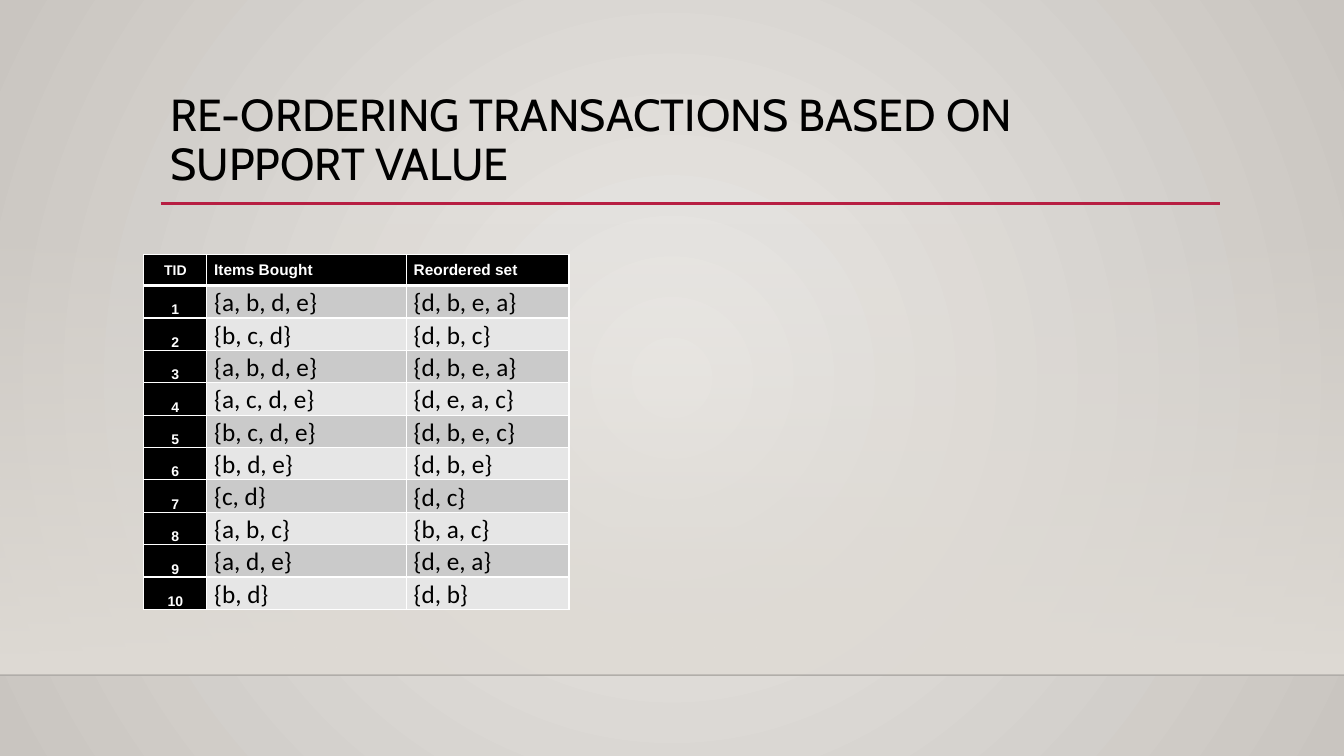
"""Build the slide on re-ordering transactions by support value."""
from dataclasses import dataclass

from lxml import etree
from pptx import Presentation
from pptx import util as u
from pptx.dml.color import RGBColor
from pptx.enum import shapes, text
from pptx.oxml import parse_xml
from pptx.oxml.ns import nsdecls, qn

PX = 9525
WIDTH, HEIGHT = 1280, 720
COLUMNS = (60, 190, 155)
ROW_HEIGHT = 30
BLACK, WHITE = "000000", "FFFFFF"
BANDS = ("CACACA", "E6E6E6")
HEADINGS = ("TID", "Items Bought", "Reordered set")
TRANSACTIONS = (
    ("{a, b, d, e}", "{d, b, e, a}"),
    ("{b, c, d}", "{d, b, c}"),
    ("{a, b, d, e}", "{d, b, e, a}"),
    ("{a, c, d, e}", "{d, e, a, c}"),
    ("{b, c, d, e}", "{d, b, e, c}"),
    ("{b, d, e}", "{d, b, e}"),
    ("{c, d}", "{d, c}"),
    ("{a, b, c}", "{b, a, c}"),
    ("{a, d, e}", "{d, e, a}"),
    ("{b, d}", "{d, b}"),
)


@dataclass(frozen=True)
class Rule:
    """A horizontal line across the slide."""
    left: int
    right: int
    y: int
    color: str
    weight: float
    opacity: int = 100


@dataclass(frozen=True)
class CellStyle:
    """The look of one kind of table cell."""
    fill: str
    font: str
    size: int
    color: str
    bold: bool
    anchor: text.MSO_ANCHOR
    align: text.PP_ALIGN = text.PP_ALIGN.LEFT
    bottom: int = 1


RULES = (
    Rule(0, WIDTH, 643, "000001", 1, 20),
    Rule(153, 1162, 194, "B71E42", 2.5),
)


def px(n: int) -> u.Emu:
    """Turn px into EMU."""
    return u.Emu(n * PX)


def rgb(value: str) -> RGBColor:
    """Turn a hex string into a colour."""
    return RGBColor.from_string(value)


def set_all(obj, values: dict) -> None:
    """Set attributes from a dict of format values."""
    for name, value in values.items():
        setattr(obj, name, value)


def write(tf, wording: str, spacing: float, align, font: str, size: int,
          color: str, bold: bool = False) -> None:
    """Write one formatted paragraph into a text frame."""
    p = tf.paragraphs[0]
    set_all(p, {"line_spacing": spacing, "alignment": align})
    r = p.add_run()
    r.text = wording
    set_all(r.font, {"name": font, "size": u.Pt(size), "bold": bold})
    r.font.color.rgb = rgb(color)


def set_gradient(fill, root, stops: tuple, shade: str) -> None:
    """Give a fill a gradient of (position, colour, opacity) stops."""
    fill.solid()
    gs = "".join(
        f'<a:gs pos="{pos * 1000}"><a:srgbClr val="{color}">'
        f'<a:alpha val="{opacity * 1000}"/></a:srgbClr></a:gs>'
        for pos, color, opacity in stops)
    solid = root.find(".//" + qn("a:solidFill"))
    solid.getparent().replace(solid, parse_xml(
        f'<a:gradFill {nsdecls("a")} rotWithShape="1">'
        f'<a:gsLst>{gs}</a:gsLst>{shade}</a:gradFill>'))


def add_backdrop(s) -> None:
    """Draw the radial background and the fading wall panel."""
    set_gradient(
        s.background.fill, s.element,
        ((0, "EBE9E6", 100), (100, "C9C5C0", 100)),
        '<a:path path="circle"><a:fillToRect l="50000" t="50000" '
        'r="50000" b="50000"/></a:path>')
    sp = s.shapes.add_shape(shapes.MSO_SHAPE.RECTANGLE,
                            px(0), px(212), px(WIDTH), px(431))
    sp.shadow.inherit = False
    sp.line.fill.background()
    set_gradient(sp.fill, sp.element.spPr,
                 ((0, "DFDBD5", 0), (100, "DFDBD5", 100)),
                 '<a:lin ang="5400000" scaled="0"/>')


def add_rule(s, rule: Rule) -> None:
    """Draw one horizontal line."""
    sp = s.shapes.add_connector(shapes.MSO_CONNECTOR.STRAIGHT, px(rule.left),
                                px(rule.y), px(rule.right), px(rule.y))
    sp.line.width = u.Pt(rule.weight)
    sp.line.color.rgb = rgb(rule.color)
    spPr = sp.element.spPr
    if rule.opacity < 100:
        color = spPr.find(".//" + qn("a:srgbClr"))
        etree.SubElement(color, qn("a:alpha"), val=str(rule.opacity * 1000))
    etree.SubElement(spPr, qn("a:effectLst"))


def add_title(s) -> None:
    """Write the slide title."""
    tf = s.shapes.add_textbox(px(153), px(84), px(1008), px(110)).text_frame
    set_all(tf, {"word_wrap": True, "vertical_anchor": text.MSO_ANCHOR.TOP})
    write(tf, "RE-ORDERING TRANSACTIONS BASED ON SUPPORT VALUE", 0.9,
          text.PP_ALIGN.LEFT, "Cabin", 32, BLACK)


def cell_style(row: int, col: int) -> CellStyle:
    """Choose the look of a cell from its place in the table."""
    anchor = text.MSO_ANCHOR
    align = text.PP_ALIGN.LEFT if col else text.PP_ALIGN.CENTER
    if row == 0:
        return CellStyle(BLACK, "Arial", 11 if col else 10, WHITE, True,
                         anchor.MIDDLE, align, 3)
    if col == 0:
        return CellStyle(BLACK, "Arial", 10, WHITE, True, anchor.BOTTOM, align)
    return CellStyle(BANDS[(row - 1) % 2], "Calibri", 18, BLACK, False,
                     anchor.BOTTOM if col == 1 else anchor.TOP)


def fill_cell(cell, wording: str, style: CellStyle, top: int) -> None:
    """Format one table cell and write its text."""
    set_all(cell, {"margin_left": px(7), "margin_right": px(7),
                   "margin_top": 0, "margin_bottom": 0,
                   "vertical_anchor": style.anchor})
    tcPr = cell._tc.get_or_add_tcPr()
    for side, weight in (("L", 1), ("R", 1), ("T", top), ("B", style.bottom)):
        tcPr.append(parse_xml(
            f'<a:ln{side} {nsdecls("a")} w="{u.Pt(weight)}"><a:solidFill>'
            f'<a:srgbClr val="{WHITE}"/></a:solidFill></a:ln{side}>'))
    cell.fill.solid()
    cell.fill.fore_color.rgb = rgb(style.fill)
    write(cell.text_frame, wording, 1.07, style.align, style.font,
          style.size, style.color, style.bold)


def add_transactions(s) -> None:
    """Draw the table of transactions."""
    rows = [HEADINGS] + [(str(tid), *sets)
                         for tid, sets in enumerate(TRANSACTIONS, 1)]
    table = s.shapes.add_table(
        len(rows), len(COLUMNS), px(137), px(242), px(sum(COLUMNS)),
        px(ROW_HEIGHT * len(rows))).table
    for column, width in zip(table.columns, COLUMNS):
        column.width = px(width)
    for i, row in enumerate(rows):
        for j, wording in enumerate(row):
            fill_cell(table.cell(i, j), wording, cell_style(i, j),
                      3 if i == 1 else 1)


def main() -> None:
    """Build and save the slide."""
    prs = Presentation()
    set_all(prs, {"slide_width": px(WIDTH), "slide_height": px(HEIGHT)})
    s = prs.slides.add_slide(prs.slide_layouts[6])
    add_backdrop(s)
    for rule in RULES:
        add_rule(s, rule)
    add_title(s)
    add_transactions(s)
    prs.save("out.pptx")


if __name__ == "__main__":
    main()
